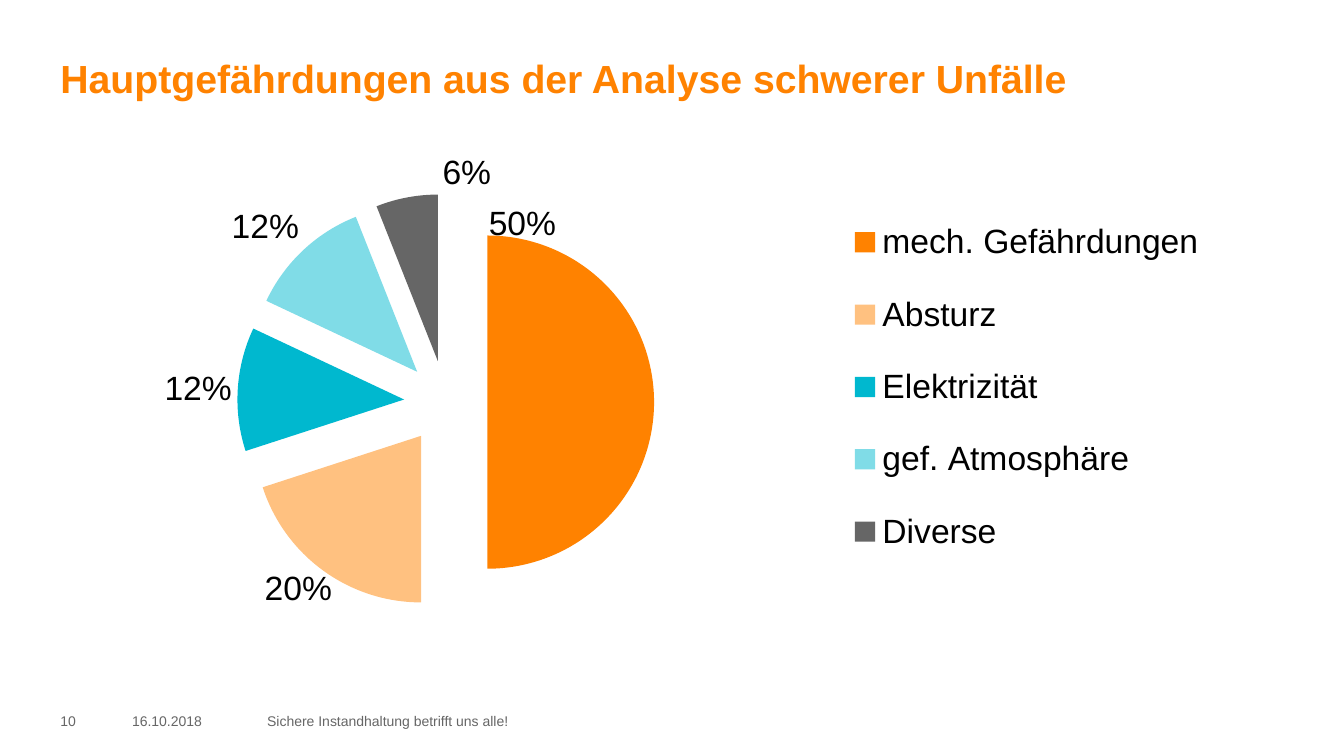
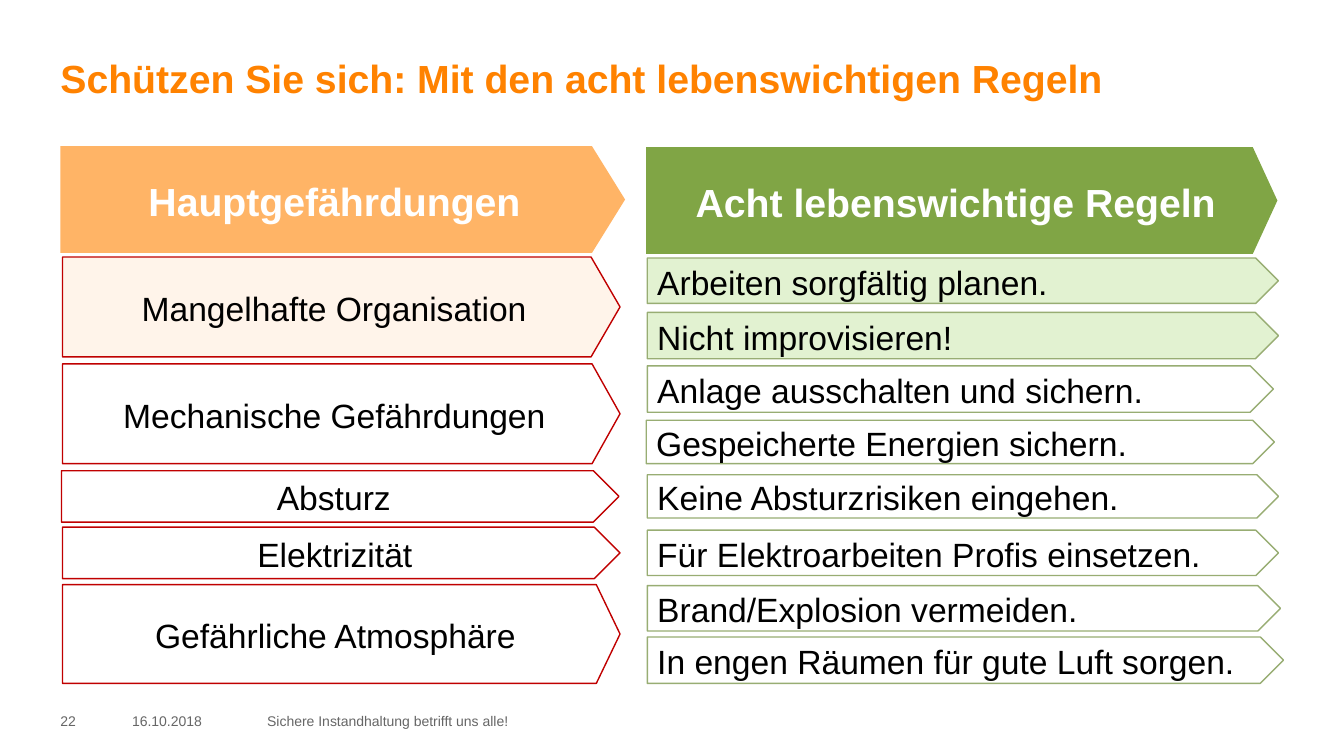
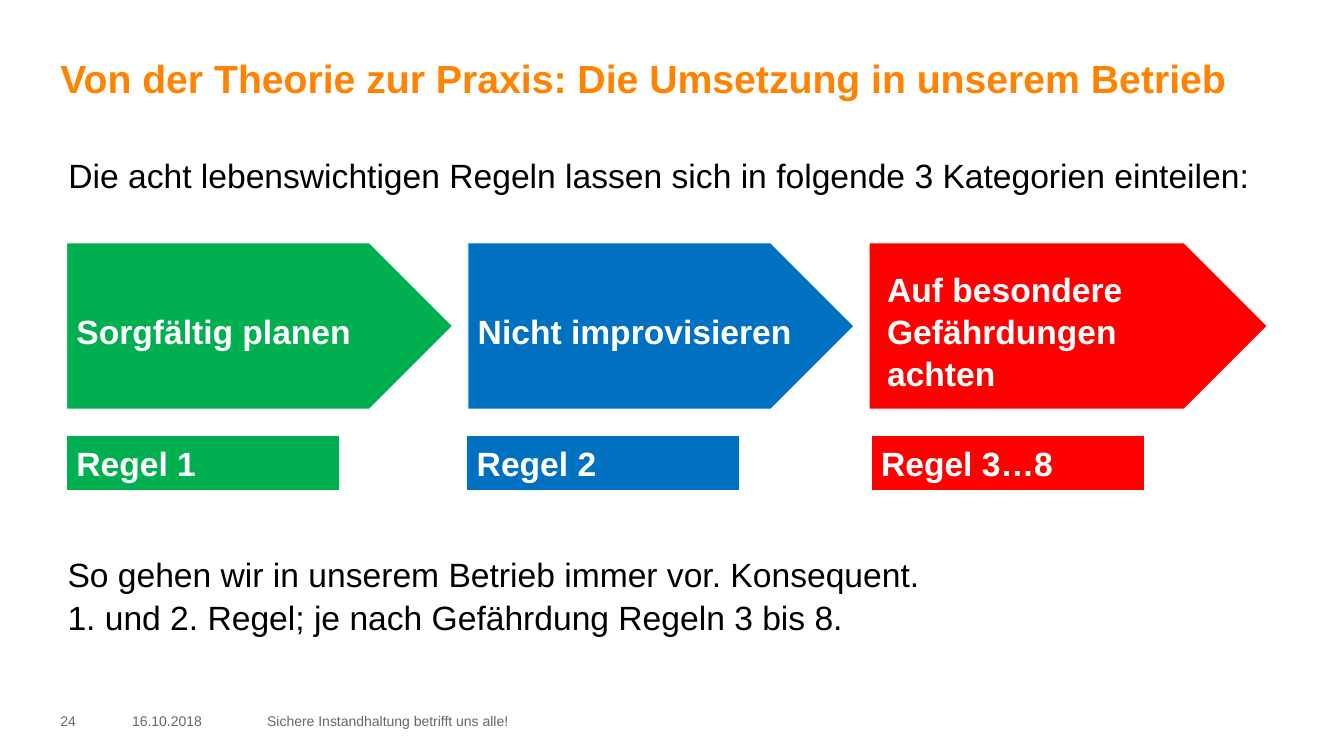
from lxml import etree
from pptx import Presentation
from pptx.chart.data import CategoryChartData
from pptx.dml.color import RGBColor
from pptx.enum.chart import XL_CHART_TYPE, XL_LABEL_POSITION, XL_LEGEND_POSITION
from pptx.enum.shapes import MSO_SHAPE
from pptx.enum.text import MSO_ANCHOR, PP_ALIGN
from pptx.oxml.ns import qn
from pptx.util import Emu, Pt

PX = 9144  # 100 px to the inch
FONT = "Arial"
ORANGE, GREY, BLACK, WHITE = "FF8200", "666666", "000000", "FFFFFF"
RED_LINE, GREEN_LINE = "C00000", "98AD73"
LINE_SPACING = 1.05
BODY_SIZE, HEAD_SIZE, FOOTER_SIZE = 24, 28, 10

DATE = "16.10.2018"
FOOTER = "Sichere Instandhaltung betrifft uns alle!"

# category, share, colour, label shift as a fraction of the chart
HAZARD_SHARES = [
    ("mech. Gefährdungen", 0.5, ORANGE, (-0.14, -0.35)),
    ("Absturz", 0.2, "FFC180", (0.01, -0.01)),
    ("Elektrizität", 0.12, "00B8CF", None),
    ("gef. Atmosphäre", 0.12, "80DCE7", None),
    ("Diverse", 0.06, GREY, (0.07, 0)),
]

# text, box, point depth, fill, opacity in percent
COLUMN_HEADS = [
    ("Hauptgefährdungen", (60, 145, 560, 106), 0.31, "FFB466"),
    ("Acht lebenswichtige Regeln", (641, 146, 626, 106), 0.23, "80A545"),
]
# text, left, top, height, point depth, fill
HAZARDS = [
    ("Mangelhafte Organisation", 62, 255, 99, 0.29, ("FFDAB3", 27)),
    ("Mechanische Gefährdungen", 62, 361, 99, 0.28, None),
    ("Absturz", 61, 467, 51, 0.5, None),
    ("Elektrizität", 62, 523, 51, 0.5, None),
    ("Gefährliche Atmosphäre", 62, 580, 98, 0.24, None),
]
HAZARD_WIDTH = 553
# text, left, top, width, height, fill
RULE_TINT = ("92D050", 26)
RULES = [
    ("Arbeiten sorgfältig planen.", 642, 256, 626, 45, RULE_TINT),
    ("Nicht improvisieren!", 642, 310, 626, 46, RULE_TINT),
    ("Anlage ausschalten und sichern.", 642, 363, 621, 46, None),
    ("Gespeicherte Energien sichern.", 641, 417, 623, 43, None),
    ("Keine Absturzrisiken eingehen.", 642, 471, 626, 43, None),
    ("Für Elektroarbeiten Profis einsetzen.", 642, 526, 626, 45, None),
    ("Brand/Explosion vermeiden.", 642, 581, 628, 45, None),
    ("In engen Räumen für gute Luft sorgen.", 642, 632, 631, 46, None),
]

# arrow lines, rule label, colour, arrow left, arrow width, label left, indent
CATEGORIES = [
    (["Sorgfältig planen"], "Regel 1", "00B050", 66, 383, 66, 0),
    (["Nicht improvisieren"], "Regel 2", "0070C0", 464, 383, 463, 0),
    (["Auf besondere", "Gefährdungen achten"], "Regel 3…8", "FF0000", 862, 395, 864, 8),
]
INTRO = "Die acht lebenswichtigen Regeln lassen sich in folgende 3 Kategorien einteilen:"
CLOSING = [
    "So gehen wir in unserem Betrieb immer vor. Konsequent.",
    "1. und 2. Regel; je nach Gefährdung Regeln 3 bis 8.",
]


def px(*lengths):
    return [Emu(length * PX) for length in lengths]


def rgb(colour):
    return RGBColor.from_string(colour)


def write(shape, lines, size=BODY_SIZE, colour=BLACK, bold=False, align=PP_ALIGN.LEFT,
          anchor=MSO_ANCHOR.TOP, insets=(10, 5, 10, 5), indent=0):
    frame = shape.text_frame
    frame.word_wrap = True
    frame.vertical_anchor = anchor
    (frame.margin_left, frame.margin_top,
     frame.margin_right, frame.margin_bottom) = px(*insets)
    for index, line in enumerate(lines):
        paragraph = frame.add_paragraph() if index else frame.paragraphs[0]
        paragraph.alignment = align
        paragraph.line_spacing = LINE_SPACING
        if indent:
            paragraph._p.get_or_add_pPr().set("marL", str(indent * PX))
        run = paragraph.add_run()
        run.text = line
        run.font.name = FONT
        run.font.size = Pt(size)
        run.font.bold = bold
        run.font.color.rgb = rgb(colour)


def add_text(slide, box, lines, **style):
    write(slide.shapes.add_textbox(*px(*box)), lines, **style)


def add_block(slide, kind, box, lines, fill=None, opacity=100, line=None,
              line_width=1, depth=None, **style):
    """Draw a filled or outlined shape with text; depth sets the arrow point."""
    shape = slide.shapes.add_shape(kind, *px(*box))
    shape.shadow.inherit = False
    if depth is not None:
        shape.adjustments[0] = depth
    if fill:
        shape.fill.solid()
        shape.fill.fore_color.rgb = rgb(fill)
        if opacity < 100:
            value = shape._element.spPr.find(".//" + qn("a:srgbClr"))
            etree.SubElement(value, qn("a:alpha")).set("val", str(opacity * 1000))
    else:
        shape.fill.background()
    if line:
        shape.line.color.rgb = rgb(line)
        shape.line.width = Pt(line_width)
    else:
        shape.line.fill.background()
    write(shape, lines, **style)


def add_slide(presentation, title, number):
    slide = presentation.slides.add_slide(presentation.slide_layouts[6])
    none = (0, 0, 0, 0)
    add_text(slide, (60, 52, 1213, 94), [title], size=HEAD_SIZE, colour=ORANGE,
             bold=True, insets=none)
    for text, left, width in ((number, 60, 55), (DATE, 131, 118), (FOOTER, 265, 858)):
        add_text(slide, (left, 705, width, 20), [text], size=FOOTER_SIZE, colour=GREY,
                 anchor=MSO_ANCHOR.MIDDLE, insets=none)
    return slide


def set_layout(parent, index, **values):
    """Give a chart part a manual layout, as the child at this index."""
    for old in parent.findall(qn("c:layout")):
        parent.remove(old)
    layout = etree.Element(qn("c:layout"))
    manual = etree.SubElement(layout, qn("c:manualLayout"))
    for name, value in values.items():
        etree.SubElement(manual, qn("c:" + name)).set("val", str(value))
    parent.insert(index, layout)


def set_chart_font(font):
    font.name = FONT
    font.size = Pt(BODY_SIZE)
    font.color.rgb = rgb(BLACK)


def add_hazard_pie(slide):
    data = CategoryChartData(number_format="0%")
    data.categories = [name for name, *_ in HAZARD_SHARES]
    data.add_series("Series 1", [share for _, share, *_ in HAZARD_SHARES])
    chart = slide.shapes.add_chart(XL_CHART_TYPE.PIE, *px(60, 147, 1213, 504), data).chart
    chart.has_title = False
    set_chart_font(chart.font)

    chart.has_legend = True
    legend = chart.legend
    legend.position = XL_LEGEND_POSITION.RIGHT
    legend.include_in_layout = False
    set_chart_font(legend.font)
    set_layout(legend._element, 1, xMode="edge", yMode="edge",
               x=0.64, y=0.08, w=0.3, h=0.78)

    plot = chart.plots[0]
    plot.vary_by_categories = True
    set_layout(plot._element.getparent(), 0, layoutTarget="inner", xMode="edge",
               yMode="edge", x=0.07, y=0.09, w=0.49, h=0.82)

    series = plot.series[0]
    labels = series.data_labels
    labels.show_value = True
    labels.number_format = "0%"
    labels.number_format_is_linked = False
    labels.position = XL_LABEL_POSITION.OUTSIDE_END
    set_chart_font(labels.font)
    for index, (_, _, colour, shift) in enumerate(HAZARD_SHARES):
        point = series.points[index]
        point.format.fill.solid()
        point.format.fill.fore_color.rgb = rgb(colour)
        point.format.line.fill.background()
        if shift:
            label = point.data_label
            label.position = XL_LABEL_POSITION.OUTSIDE_END
            set_chart_font(label.font)
            element = series._element.findall(".//" + qn("c:dLbl"))[-1]
            set_layout(element, 1, x=shift[0], y=shift[1])
    explosion = etree.Element(qn("c:explosion"))
    explosion.set("val", "25")
    series._element.find(qn("c:dPt")).addprevious(explosion)
    for leader in series._element.iter(qn("c:showLeaderLines")):
        leader.set("val", "0")


def add_rule_columns(slide):
    middle = MSO_ANCHOR.MIDDLE
    for text, box, depth, fill in COLUMN_HEADS:
        add_block(slide, MSO_SHAPE.PENTAGON, box, [text], fill, depth=depth, size=HEAD_SIZE,
                  colour=WHITE, bold=True, align=PP_ALIGN.CENTER, anchor=middle)
    for text, left, top, height, depth, tint in HAZARDS:
        add_block(slide, MSO_SHAPE.PENTAGON, (left, top, HAZARD_WIDTH, height), [text],
                  *(tint or ()), line=RED_LINE, depth=depth,
                  align=PP_ALIGN.CENTER, anchor=middle)
    for text, *box, tint in RULES:
        add_block(slide, MSO_SHAPE.PENTAGON, box, [text], *(tint or ()),
                  line=GREEN_LINE, anchor=middle)


def add_categories(slide):
    add_text(slide, (58, 147, 1213, 50), [INTRO])
    look = dict(line=WHITE, line_width=0.75, colour=WHITE, bold=True)
    for lines, rule, fill, left, width, rule_left, indent in CATEGORIES:
        add_block(slide, MSO_SHAPE.PENTAGON, (left, 241, width, 165), lines, fill,
                  anchor=MSO_ANCHOR.MIDDLE, insets=(10, 13, 10, 5), indent=indent, **look)
        add_block(slide, MSO_SHAPE.RECTANGLE, (rule_left, 432, 271, 55), [rule], fill, **look)
    add_text(slide, (67, 548, 1214, 77), CLOSING, insets=(0, 0, 0, 0))


SLIDES = [
    ("Hauptgefährdungen aus der Analyse schwerer Unfälle", "10", add_hazard_pie),
    ("Schützen Sie sich: Mit den acht lebenswichtigen Regeln", "22", add_rule_columns),
    ("Von der Theorie zur Praxis: Die Umsetzung in unserem Betrieb", "24", add_categories),
]


def main():
    presentation = Presentation()
    presentation.slide_width, presentation.slide_height = px(1333, 750)
    for title, number, add_content in SLIDES:
        add_content(add_slide(presentation, title, number))
    presentation.save("out.pptx")


if __name__ == "__main__":
    main()
